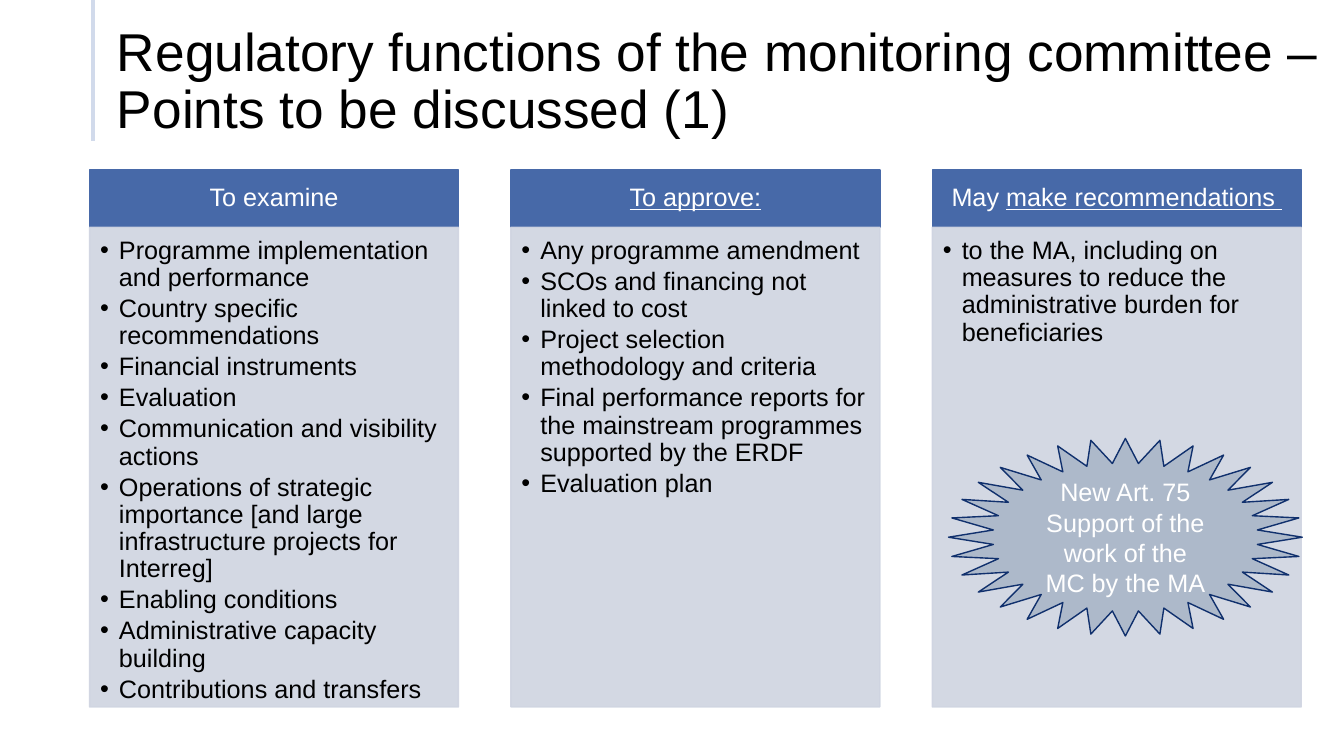
"""Build the slide on the regulatory functions of the monitoring committee."""
from lxml import etree
from pptx import Presentation
from pptx import util as u
from pptx.dml import color
from pptx.enum import shapes, text
from pptx.oxml import ns

BLUE, PALE, BLACK, WHITE = "4769A8", "CFD4E1", "000000", "FFFFFF"
COLUMN_LEFT, COLUMN_STEP, COLUMN_WIDTH = 64, 301, 263.5
HEADER_TOP, HEADER_HEIGHT, BODY_TOP, BODY_HEIGHT = 121.5, 41, 162.3, 342.7


def rgb(value):
    return color.RGBColor.from_string(value)


def add_box(slide, kind, left, top, width, height, fill, line, margins, anchor):
    shape = slide.shapes.add_shape(kind, u.Pt(left), u.Pt(top), u.Pt(width), u.Pt(height))
    shape.shadow.inherit = False
    shape.fill.solid()
    shape.fill.fore_color.rgb = rgb(fill)
    shape.line.color.rgb = rgb(line)
    shape.line.width = u.Pt(1)
    frame = shape.text_frame
    frame.word_wrap = True
    frame.vertical_anchor = anchor
    frame.margin_left, frame.margin_top, frame.margin_right, frame.margin_bottom = map(u.Pt, margins)
    return shape


columns = [
    (("To examine", ""), [
        "Programme implementation and performance",
        "Country specific recommendations",
        "Financial instruments",
        "Evaluation",
        "Communication and visibility actions",
        "Operations of strategic importance [and large infrastructure projects for Interreg]",
        "Enabling conditions",
        "Administrative capacity building",
        "Contributions and transfers",
    ]),
    (("", "To approve:"), [
        "Any programme amendment",
        "SCOs and financing not linked to cost",
        "Project selection methodology and criteria",
        "Final performance reports for the mainstream programmes supported by the ERDF",
        "Evaluation plan",
    ]),
    (("May ", "make recommendations "), [
        "to the MA, including on measures to reduce the administrative burden for beneficiaries",
    ]),
]

presentation = Presentation()
presentation.slide_width, presentation.slide_height = u.Pt(960), u.Pt(540)
slide = presentation.slides.add_slide(presentation.slide_layouts[6])

title_rule = slide.shapes.add_connector(
    shapes.MSO_CONNECTOR.STRAIGHT, u.Pt(66.5), u.Pt(0), u.Pt(66.5), u.Pt(101))
title_rule.line.color.rgb = rgb("D1DAEB")
title_rule.line.width = u.Pt(2.25)
etree.SubElement(title_rule.element.spPr, ns.qn("a:effectLst"))

title = slide.shapes.add_textbox(u.Pt(76.5), u.Pt(38), u.Pt(945), u.Pt(62))
frame = title.text_frame
frame.word_wrap = True
frame.vertical_anchor = text.MSO_ANCHOR.BOTTOM
frame.margin_bottom = 0
frame.text = "Regulatory functions of the monitoring committee – \vPoints to be discussed (1)"
paragraph = frame.paragraphs[0]
paragraph.line_spacing = 0.9
for run in paragraph.runs:
    run.font.name, run.font.size = "Arial", u.Pt(38)
    run.font.color.rgb = rgb(BLACK)

for index, (heading, points) in enumerate(columns):
    left = COLUMN_LEFT + index * COLUMN_STEP
    header = add_box(slide, shapes.MSO_SHAPE.RECTANGLE, left, HEADER_TOP, COLUMN_WIDTH, HEADER_HEIGHT,
                     BLUE, BLUE, (10, 6, 10, 6), text.MSO_ANCHOR.MIDDLE)
    paragraph = header.text_frame.paragraphs[0]
    paragraph.alignment = text.PP_ALIGN.CENTER
    paragraph.line_spacing = 0.9
    for underlined, words in enumerate(heading):
        if words:
            run = paragraph.add_run()
            run.text = words
            run.font.name, run.font.size = "Arial", u.Pt(18)
            run.font.color.rgb = rgb(WHITE)
            run.font.underline = bool(underlined)

    body = add_box(slide, shapes.MSO_SHAPE.RECTANGLE, left, BODY_TOP, COLUMN_WIDTH, BODY_HEIGHT,
                   PALE, PALE, (7.5, 7.5, 10, 11.5), text.MSO_ANCHOR.TOP)
    for tint in body.element.spPr.iter(ns.qn("a:srgbClr")):
        etree.SubElement(tint, ns.qn("a:alpha"), val="90000")
    body.text_frame.text = "\n".join(points)
    for paragraph in body.text_frame.paragraphs:
        properties = paragraph._p.get_or_add_pPr()
        properties.set("marL", str(u.Pt(13.5)))
        properties.set("indent", str(-u.Pt(13.5)))
        etree.SubElement(properties, ns.qn("a:buFont"), typeface="Arial")
        etree.SubElement(properties, ns.qn("a:buChar"), char="•")
        paragraph.alignment = text.PP_ALIGN.LEFT
        paragraph.line_spacing = 0.9
        paragraph.space_after = u.Pt(2.7)
        paragraph.font.name, paragraph.font.size = "Arial", u.Pt(18)
        for run in paragraph.runs:
            run.font.name, run.font.size = "Arial", u.Pt(18)
            run.font.color.rgb = rgb(BLACK)

star = add_box(slide, shapes.MSO_SHAPE.STAR_32_POINT, 677.5, 313.2, 252.7, 141.1,
               "ADB9CA", "10306D", (7.2, 3.6, 7.2, 3.6), text.MSO_ANCHOR.MIDDLE)
star.text_frame.text = "New Art. 75 Support of the work of the MC by the MA"
paragraph = star.text_frame.paragraphs[0]
paragraph.alignment = text.PP_ALIGN.CENTER
font = paragraph.runs[0].font
font.name, font.size = "Arial", u.Pt(18)
font.color.rgb = rgb(WHITE)

presentation.save("out.pptx")
